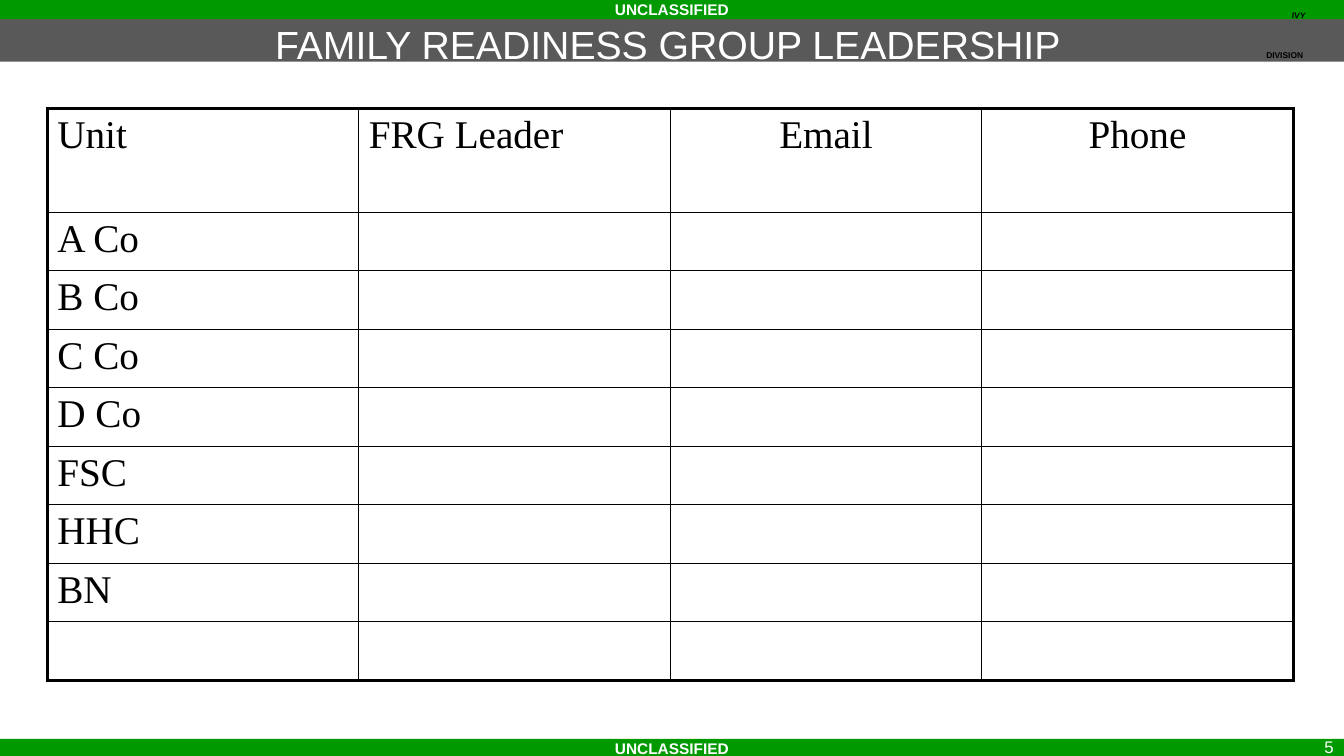
from lxml.etree import SubElement
from pptx import Presentation
from pptx.dml.color import RGBColor
from pptx.enum.shapes import MSO_SHAPE as Preset
from pptx.enum.text import MSO_ANCHOR as Anchor, PP_ALIGN as Align
from pptx.oxml.ns import qn
from pptx.util import Pt

TITLE = "FAMILY READINESS GROUP LEADERSHIP"
MARKING = "UNCLASSIFIED"
PAGE_NUMBER = "5"
HEADERS = [
    ("Unit", Align.LEFT),
    ("FRG Leader", Align.LEFT),
    ("Email", Align.CENTER),
    ("Phone", Align.CENTER),
]
UNITS = ["A Co", "B Co", "C Co", "D Co", "FSC", "HHC", "BN", ""]
EMBLEM_WORDS = [
    ("IVY", (895, 5, 65.5, 12.2), 6.9),
    ("DIVISION", (892.8, 33.6, 49.7, 12.2), 0),
]

BLACK = RGBColor(0x00, 0x00, 0x00)
WHITE = RGBColor(0xFF, 0xFF, 0xFF)
GREEN = RGBColor(0x00, 0x99, 0x00)
GRAY = RGBColor(0x59, 0x59, 0x59)

WIDTH, HEIGHT = 960, 540
BAR_HEIGHT = 13.7
TABLE_LEFT, TABLE_TOP = 33.8, 77.6
COLUMN_WIDTH = 222.5
HEADER_HEIGHT, ROW_HEIGHT = 74, 41.8
THIN, THICK = 1, 2.25


def write_text(frame, text, size=28, font="Arial", color=WHITE, bold=False,
               align=Align.CENTER):
    paragraph = frame.paragraphs[0]
    paragraph.alignment = align
    paragraph.space_before = Pt(0)
    paragraph.font.size = Pt(size)
    if text:
        run = paragraph.add_run()
        run.text = text
        run.font.name = font
        run.font.size = Pt(size)
        run.font.bold = bold
        run.font.color.rgb = color


def set_frame(frame, side=0):
    frame.word_wrap = True
    frame.vertical_anchor = Anchor.MIDDLE
    frame.margin_left = frame.margin_right = Pt(side)
    frame.margin_top = frame.margin_bottom = Pt(0)


def add_bar(slide, top, height, color, text=""):
    bar = slide.shapes.add_shape(Preset.RECTANGLE, Pt(0), Pt(top), Pt(WIDTH), Pt(height))
    bar.shadow.inherit = False
    bar.fill.solid()
    bar.fill.fore_color.rgb = color
    bar.line.fill.background()
    set_frame(bar.text_frame)
    if text:
        write_text(bar.text_frame, text, size=11, bold=True)


def add_label(slide, box, text, side=0, **text_format):
    label = slide.shapes.add_textbox(*map(Pt, box))
    set_frame(label.text_frame, side)
    write_text(label.text_frame, text, **text_format)
    return label


def set_borders(cell, widths):
    properties = cell._tc.get_or_add_tcPr()
    for side, width in widths.items():
        line = SubElement(properties, qn(f"a:ln{side}"), w=str(Pt(width)))
        fill = SubElement(line, qn("a:solidFill"))
        SubElement(fill, qn("a:srgbClr"), val=str(BLACK))


def add_leader_table(slide):
    row_count, column_count = len(UNITS) + 1, len(HEADERS)
    table = slide.shapes.add_table(
        row_count, column_count, Pt(TABLE_LEFT), Pt(TABLE_TOP),
        Pt(COLUMN_WIDTH * column_count),
        Pt(HEADER_HEIGHT + ROW_HEIGHT * len(UNITS))).table
    table.first_row = False
    table.horz_banding = False
    for column in table.columns:
        column.width = Pt(COLUMN_WIDTH)
    for r, row in enumerate(table.rows):
        row.height = Pt(ROW_HEIGHT if r else HEADER_HEIGHT)
        for c, (header, align) in enumerate(HEADERS):
            cell = table.cell(r, c)
            set_borders(cell, {
                "L": THIN if c else THICK,
                "R": THICK if c == column_count - 1 else THIN,
                "T": THIN if r else THICK,
                "B": THICK if r == row_count - 1 else THIN,
            })
            cell.fill.background()
            if r == 0:
                text = header
            else:
                text = UNITS[r - 1] if c == 0 else ""
            write_text(cell.text_frame, text, font="Times New Roman",
                       color=BLACK, align=align)


def main():
    presentation = Presentation()
    presentation.slide_width, presentation.slide_height = Pt(WIDTH), Pt(HEIGHT)
    slide = presentation.slides.add_slide(presentation.slide_layouts[5])

    add_bar(slide, 1.4, 42.7, GRAY)
    for top in (0, 527.8):
        add_bar(slide, top, BAR_HEIGHT, GREEN, MARKING)
    for word, box, rotation in EMBLEM_WORDS:
        label = add_label(slide, box, word, size=6, color=BLACK, bold=True)
        label.rotation = rotation
    add_leader_table(slide)

    title = slide.shapes.title
    title.left, title.top, title.width, title.height = map(Pt, (113, 17.6, 728, 28))
    set_frame(title.text_frame)
    write_text(title.text_frame, TITLE)
    slide.shapes.element.append(title.element)

    add_label(slide, (743.8, 526.3, 216, 14.4), PAGE_NUMBER, side=7.2, size=12,
              align=Align.RIGHT)
    presentation.save("out.pptx")


if __name__ == "__main__":
    main()
